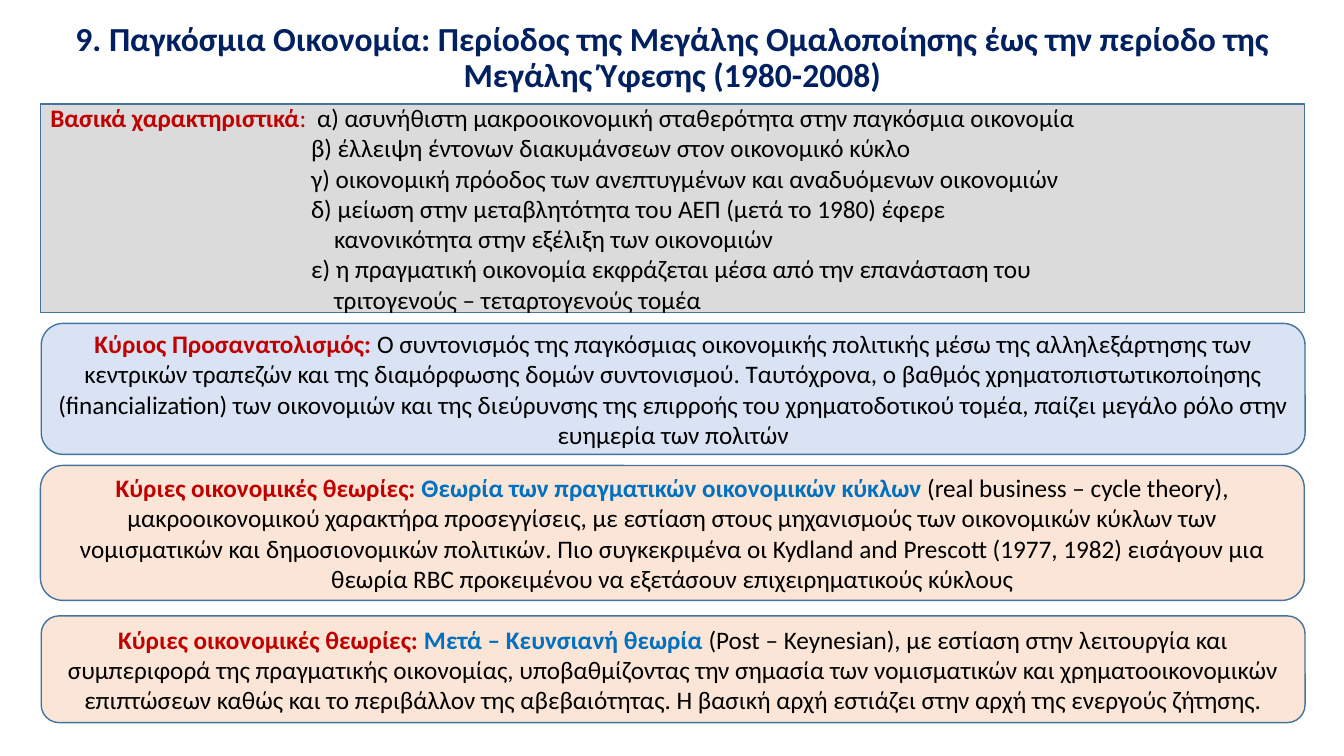
"""Build the slide on the world economy from 1980 to 2008."""
from pptx import Presentation
from pptx.dml.color import RGBColor
from pptx.enum.shapes import MSO_SHAPE
from pptx.enum.text import MSO_ANCHOR, PP_ALIGN
from pptx.util import Cm, Pt

RECT, ROUND = MSO_SHAPE.RECTANGLE, MSO_SHAPE.ROUNDED_RECTANGLE
CENTER, JUSTIFY = PP_ALIGN.CENTER, PP_ALIGN.JUSTIFY
MIDDLE = MSO_ANCHOR.MIDDLE

NAVY, RED, BLUE, BLACK = "002060", "C00000", "0070C0", "000000"
GREY, PALE_BLUE, PEACH, BORDER = "DBDBDB", "DAE3F3", "FBE5D6", "43739E"
WIDTH = 31.85
FIRST, ITEM, CONTINUED = 6.72, 6.57, 7.15

TITLE = ("9. Παγκόσμια Οικονομία: Περίοδος της Μεγάλης Ομαλοποίησης έως την "
         "περίοδο της Μεγάλης Ύφεσης (1980-2008)")

FEATURES = [
    (ITEM, "β) έλλειψη έντονων διακυμάνσεων στον οικονομικό κύκλο"),
    (ITEM, "γ) οικονομική πρόοδος των ανεπτυγμένων και αναδυόμενων οικονομιών"),
    (ITEM, "δ) μείωση στην μεταβλητότητα του ΑΕΠ (μετά το 1980) έφερε"),
    (CONTINUED, "κανονικότητα στην εξέλιξη των οικονομιών"),
    (ITEM, "ε) η πραγματική οικονομία εκφράζεται μέσα από την επανάσταση του"),
    (CONTINUED, "τριτογενούς – τεταρτογενούς τομέα"),
]
FEATURE_LINES = [
    (FIRST, -FIRST, [
        ("Βασικά χαρακτηριστικά", RED, True),
        (":\t", RED, False),
        ("α) ασυνήθιστη μακροοικονομική σταθερότητα στην παγκόσμια οικονομία",
         BLACK, False)]),
] + [(indent, 0, [(text, BLACK, False)]) for indent, text in FEATURES]

ORIENTATION = [
    ("Κύριος Προσανατολισμός: ", RED, True),
    ("Ο συντονισμός της παγκόσμιας οικονομικής πολιτικής μέσω της "
     "αλληλεξάρτησης των κεντρικών τραπεζών και της διαμόρφωσης δομών "
     "συντονισμού. Ταυτόχρονα, ο βαθμός χρηματοπιστωτικοποίησης "
     "(financialization) των οικονομιών και της διεύρυνσης της επιρροής του "
     "χρηματοδοτικού τομέα, παίζει μεγάλο ρόλο στην ευημερία των πολιτών",
     BLACK, False),
]
THEORIES = ("Κύριες οικονομικές θεωρίες: ", RED, True)
REAL_CYCLES = [
    THEORIES,
    ("Θεωρία των πραγματικών οικονομικών κύκλων ", BLUE, True),
    ("(real business – cycle theory), μακροοικονομικού χαρακτήρα "
     "προσεγγίσεις, με εστίαση στους μηχανισμούς των οικονομικών κύκλων των "
     "νομισματικών και δημοσιονομικών πολιτικών. Πιο συγκεκριμένα οι Kydland "
     "and Prescott (1977, 1982) εισάγουν μια θεωρία RBC προκειμένου να "
     "εξετάσουν επιχειρηματικούς κύκλους", BLACK, False),
]
POST_KEYNESIAN = [
    THEORIES,
    ("Μετά – Κευνσιανή θεωρία ", BLUE, True),
    ("(Post – Keynesian), με εστίαση στην λειτουργία και συμπεριφορά της "
     "πραγματικής οικονομίας, υποβαθμίζοντας την σημασία των νομισματικών και "
     "χρηματοοικονομικών επιπτώσεων καθώς και το περιβάλλον της αβεβαιότητας. "
     "Η βασική αρχή εστιάζει στην αρχή της ενεργούς ζήτησης.", BLACK, False),
]

PANELS = [
    (RECT, 1.02, 2.62, 5.26, GREY, JUSTIFY, FEATURE_LINES),
    (ROUND, 1.04, 8.15, 3.3, PALE_BLUE, CENTER, [(0, 0, ORIENTATION)]),
    (ROUND, 1.02, 11.73, 3.4, PEACH, CENTER, [(0, 0, REAL_CYCLES)]),
    (ROUND, 1.04, 15.52, 2.69, PEACH, CENTER, [(0, 0, POST_KEYNESIAN)]),
]


def rgb(value):
    return RGBColor.from_string(value)


def write(sp, lines, align, size, spacing=1.0):
    tf = sp.text_frame
    tf.word_wrap = True
    tf.vertical_anchor = MIDDLE
    for i, (margin, indent, runs) in enumerate(lines):
        p = tf.add_paragraph() if i else tf.paragraphs[0]
        p.alignment = align
        p.line_spacing = spacing
        if margin:
            pPr = p._p.get_or_add_pPr()
            pPr.set("marL", str(Cm(margin)))
            pPr.set("indent", str(Cm(indent)))
        for text, color, bold in runs:
            r = p.add_run()
            r.text = text
            r.font.name = "Calibri"
            r.font.size = Pt(size)
            r.font.bold = bold
            r.font.color.rgb = rgb(color)


def add_panel(s, kind, left, top, height, fill, align, lines):
    sp = s.shapes.add_shape(kind, Cm(left), Cm(top), Cm(WIDTH), Cm(height))
    sp.shadow.inherit = False
    sp.fill.solid()
    sp.fill.fore_color.rgb = rgb(fill)
    sp.line.color.rgb = rgb(BORDER)
    sp.line.width = Pt(1)
    write(sp, lines, align, 18)


def main():
    prs = Presentation()
    prs.slide_width, prs.slide_height = Cm(33.87), Cm(19.05)
    s = prs.slides.add_slide(prs.slide_layouts[6])
    title = s.shapes.add_textbox(Cm(1.02), Cm(0.43), Cm(WIDTH), Cm(2.11))
    write(title, [(0, 0, [(TITLE, NAVY, True)])], CENTER, 24, 0.9)
    for panel in PANELS:
        add_panel(s, *panel)
    prs.save("out.pptx")


if __name__ == "__main__":
    main()
